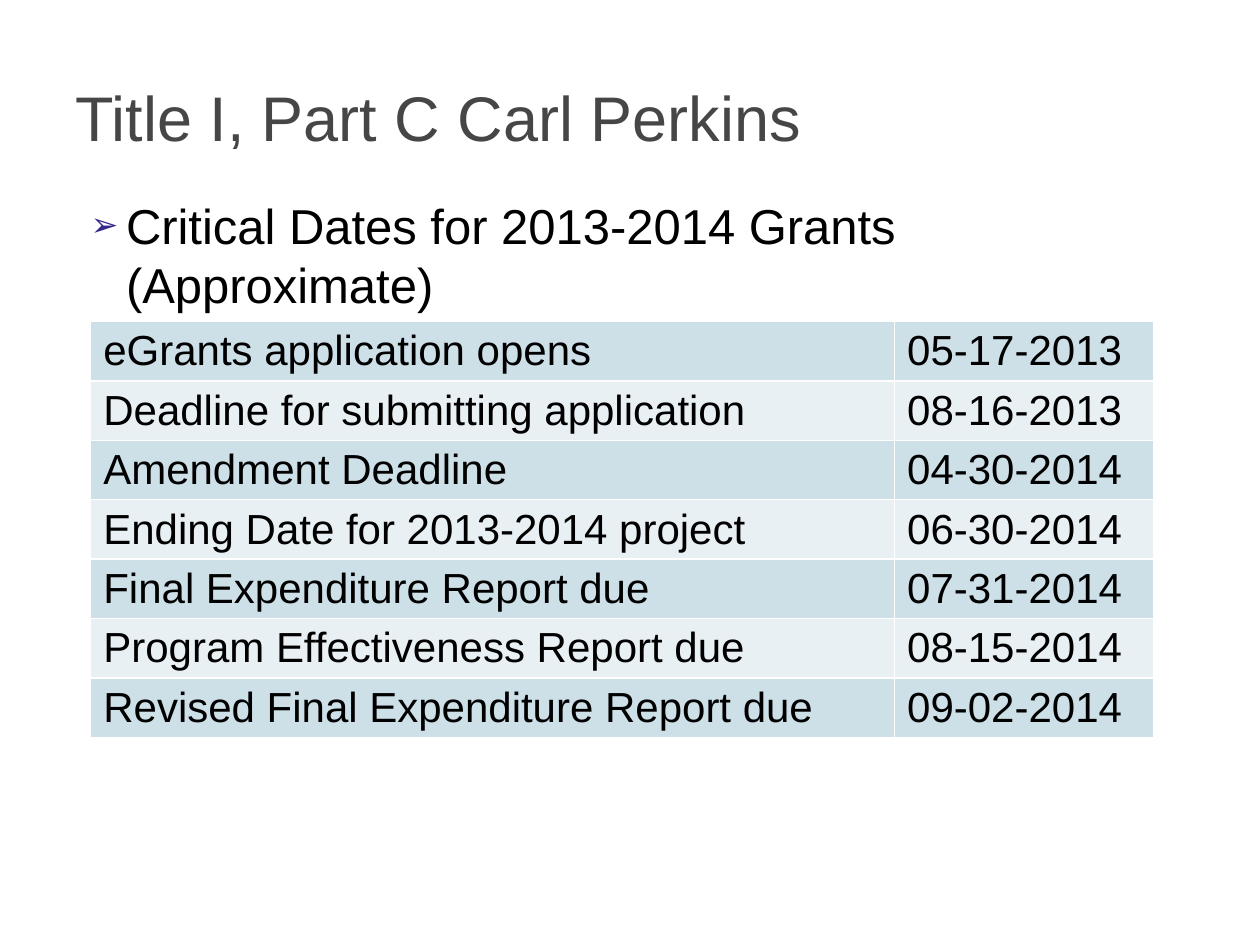
"""Build the slide of critical grant dates."""
from dataclasses import dataclass
from typing import NamedTuple

from lxml.etree import SubElement
from pptx import Presentation
from pptx.dml.color import RGBColor
from pptx.enum.text import MSO_ANCHOR, MSO_AUTO_SIZE, PP_ALIGN
from pptx.oxml.ns import qn
from pptx.util import Inches, Pt


@dataclass(frozen=True)
class Theme:
    """Colours, typeface and type sizes of the slide."""
    font: str = "Arial"
    title_color: str = "464646"
    text_color: str = "000000"
    bullet_color: str = "34278D"
    border_color: str = "FFFFFF"
    bands: tuple[str, str] = ("CDE0E8", "E8F0F4")
    title_size: int = 36
    body_size: int = 28
    table_size: int = 24


class GrantDate(NamedTuple):
    """A milestone and the day it falls on."""
    milestone: str
    day: str


THEME = Theme()
GRANT_DATES = [
    GrantDate("eGrants application opens", "05-17-2013"),
    GrantDate("Deadline for submitting application", "08-16-2013"),
    GrantDate("Amendment Deadline", "04-30-2014"),
    GrantDate("Ending Date for 2013-2014 project", "06-30-2014"),
    GrantDate("Final Expenditure Report due", "07-31-2014"),
    GrantDate("Program Effectiveness Report due", "08-15-2014"),
    GrantDate("Revised Final Expenditure Report due", "09-02-2014"),
]
COLUMN_WIDTHS = (6.38, 2.06)
ROW_HEIGHT = 0.47


def write(frame, text: str, *, size: int, color: str = THEME.text_color, bullet: str = "") -> None:
    """Put one formatted paragraph in a text frame."""
    para = frame.paragraphs[0]
    para.alignment = PP_ALIGN.LEFT
    para.space_before = Pt(0)
    if bullet:
        add_bullet(para, bullet)
    span = para.add_run()
    span.text = text
    span.font.name = THEME.font
    span.font.size = Pt(size)
    span.font.bold = False
    span.font.color.rgb = RGBColor.from_string(color)


def add_bullet(para, character: str) -> None:
    """Give a paragraph a hanging coloured bullet."""
    properties = para._p.get_or_add_pPr()
    properties.set("marL", str(Inches(0.4)))
    properties.set("indent", str(Inches(-0.28)))
    color = SubElement(properties, qn("a:buClr"))
    SubElement(color, qn("a:srgbClr"), val=THEME.bullet_color)
    SubElement(properties, qn("a:buSzPct"), val="68000")
    SubElement(properties, qn("a:buChar"), char=character)


def add_borders(cell) -> None:
    """Outline all four sides of a table cell."""
    properties = cell._tc.get_or_add_tcPr()
    for side in ("lnL", "lnR", "lnT", "lnB"):
        line = SubElement(properties, qn(f"a:{side}"), w=str(Pt(1)))
        fill = SubElement(line, qn("a:solidFill"))
        SubElement(fill, qn("a:srgbClr"), val=THEME.border_color)


def place(box, left: float, top: float, width: float, height: float) -> None:
    """Move and size a placeholder and keep its type size fixed."""
    box.left, box.top = Inches(left), Inches(top)
    box.width, box.height = Inches(width), Inches(height)
    box.text_frame.word_wrap = True
    box.text_frame.auto_size = MSO_AUTO_SIZE.NONE


def add_date_table(page, dates: list[GrantDate]) -> None:
    """Draw the banded table of milestones."""
    table = page.shapes.add_table(
        len(dates), len(COLUMN_WIDTHS), Inches(0.72), Inches(2.55),
        Inches(sum(COLUMN_WIDTHS)), Inches(ROW_HEIGHT * len(dates)),
    ).table
    table.first_row = False
    table.horz_banding = False
    for column, width in zip(table.columns, COLUMN_WIDTHS):
        column.width = Inches(width)
    for index, (row, date) in enumerate(zip(table.rows, dates)):
        for cell, text in zip(row.cells, date):
            add_borders(cell)
            cell.fill.solid()
            cell.fill.fore_color.rgb = RGBColor.from_string(THEME.bands[index % 2])
            write(cell.text_frame, text, size=THEME.table_size)


def main() -> None:
    """Build and save the deck."""
    deck = Presentation()
    deck.slide_width, deck.slide_height = Inches(10), Inches(7.5)
    page = deck.slides.add_slide(deck.slide_layouts[1])
    title, body = page.placeholders
    place(title, 0.5, 0.3, 9, 1.25)
    title.text_frame.vertical_anchor = MSO_ANCHOR.MIDDLE
    write(title.text_frame, "Title I, Part C Carl Perkins",
          size=THEME.title_size, color=THEME.title_color)
    place(body, 0.5, 1.46, 9, 5.11)
    body.text_frame.margin_top = Inches(0.09)
    write(body.text_frame, "Critical Dates for 2013-2014 Grants (Approximate)",
          size=THEME.body_size, bullet="➢")
    add_date_table(page, GRANT_DATES)
    deck.save("out.pptx")


if __name__ == "__main__":
    main()
